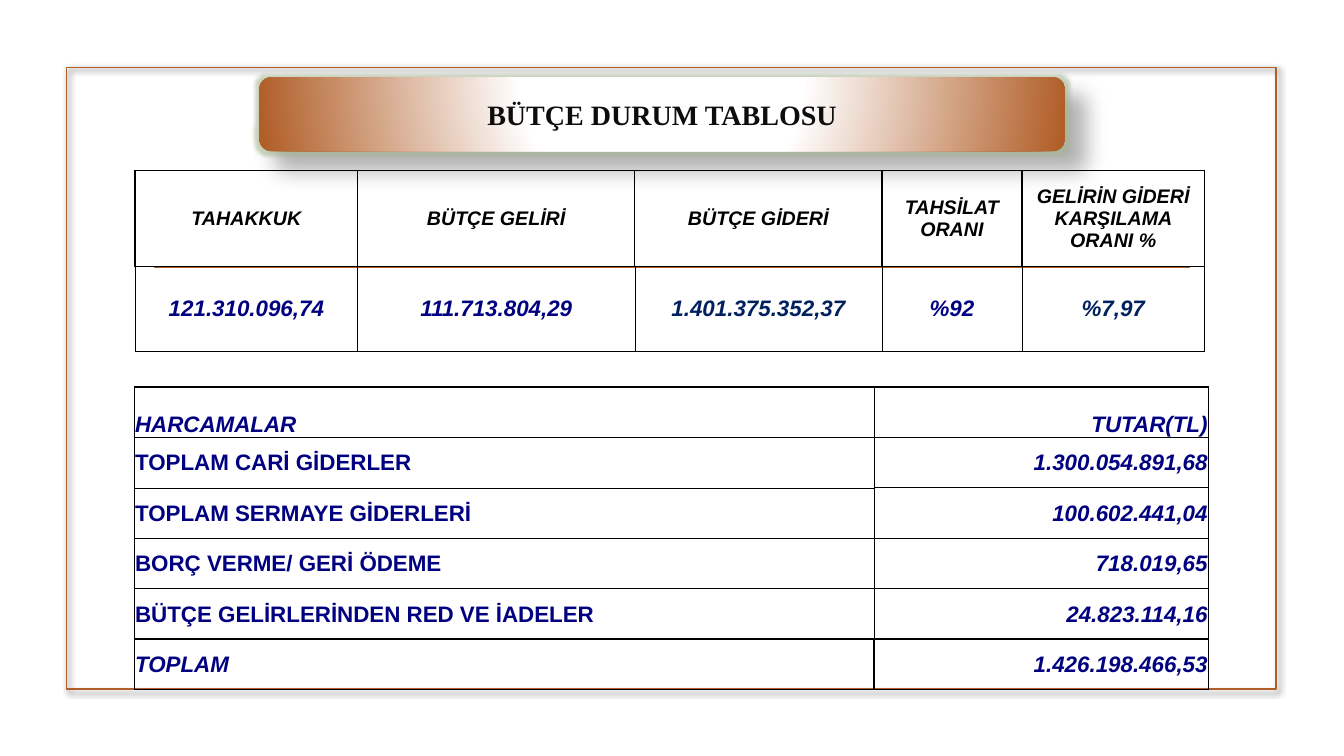
from lxml.etree import fromstring
from pptx import Presentation
from pptx.dml.color import RGBColor
from pptx.enum.shapes import MSO_CONNECTOR as CONN, MSO_SHAPE as SHAPE
from pptx.enum.text import MSO_ANCHOR as ANCHOR, PP_ALIGN as ALIGN
from pptx.oxml.ns import qn
from pptx.util import Pt

TITLE = "BÜTÇE DURUM TABLOSU"
# heading, value, colour of the value
REVENUE = [
    ("TAHAKKUK", "121.310.096,74", "navy"),
    ("BÜTÇE GELİRİ", "111.713.804,29", "navy"),
    ("BÜTÇE GİDERİ", "1.401.375.352,37", "dark_blue"),
    ("TAHSİLAT ORANI", "%92", "navy"),
    ("GELİRİN GİDERİ KARŞILAMA ORANI %", "%7,97", "dark_blue"),
]
# label, amount, is the label italic
EXPENSES = [
    ("HARCAMALAR", "TUTAR(TL)", True),
    ("TOPLAM CARİ GİDERLER", "1.300.054.891,68", False),
    ("TOPLAM SERMAYE GİDERLERİ", "100.602.441,04", False),
    ("BORÇ VERME/ GERİ ÖDEME", "718.019,65", False),
    ("BÜTÇE GELİRLERİNDEN RED VE İADELER", "24.823.114,16", False),
    ("TOPLAM", "1.426.198.466,53", True),
]

THEME = {
    "colors": {"copper": "B15E28", "white": "FFFFFF", "black": "000000",
               "navy": "000080", "dark_blue": "002060", "ink": "0D0D0D",
               "glow": "A5B592"},
    "sizes": {"title": 20, "heading": 14, "value": 16},
    "fonts": {"title": "Times New Roman", "table": "Arial"},
    "frame_line": 1.25, "thin": 0.5, "thick": 1,
}
HEX = THEME["colors"]
SIZE = THEME["sizes"]
THIN, THICK = THEME["thin"], THEME["thick"]
NS = 'xmlns:a="http://schemas.openxmlformats.org/drawingml/2006/main"'


def color(name):
    return RGBColor.from_string(HEX[name])


def emu(points):
    return int(Pt(points))


def write(tf, text, font, size, ink, align, italic=False):
    p = tf.paragraphs[0]
    p.alignment = align
    r = p.add_run()
    r.text = text
    r.font.color.rgb = color(ink)
    fmt = {"name": THEME["fonts"][font], "size": Pt(SIZE[size]),
           "bold": True, "italic": italic}
    for key, value in fmt.items():
        setattr(r.font, key, value)


def shadow_xml(alpha, blur, dist):
    return (f'<a:outerShdw blurRad="{emu(blur)}" dist="{emu(dist)}" dir="2700000" '
            f'algn="tl" rotWithShape="0"><a:srgbClr val="{HEX["black"]}">'
            f'<a:alpha val="{alpha * 1000}"/></a:srgbClr></a:outerShdw>')


def set_effects(s, effects=""):
    """Replace the effects of a shape or connector; none by default."""
    sppr = s._element.spPr
    for old in sppr.findall(qn("a:effectLst")):
        sppr.remove(old)
    sppr.append(fromstring(f"<a:effectLst {NS}>{effects}</a:effectLst>"))


def set_borders(cell, widths):
    """Widths go left, right, top, bottom."""
    tcpr = cell._tc.get_or_add_tcPr()
    for side, width in zip("LRTB", widths):
        tcpr.append(fromstring(
            f'<a:ln{side} {NS} w="{emu(width)}"><a:solidFill>'
            f'<a:srgbClr val="{HEX["black"]}"/></a:solidFill></a:ln{side}>'))


def add_grid(slide, left, top, cols, rows, vertical, horizontal, fill_cell):
    """Draw a table; vertical(row, edge) and horizontal(col, edge) give line widths."""
    table = slide.shapes.add_table(len(rows), len(cols), Pt(left), Pt(top),
                                   Pt(sum(cols)), Pt(sum(rows))).table
    table.first_row = table.horz_banding = False
    for column, width in zip(table.columns, cols):
        column.width = Pt(width)
    for i, height in enumerate(rows):
        table.rows[i].height = Pt(height)
        for j in range(len(cols)):
            cell = table.cell(i, j)
            fmt = {"margin_left": Pt(0.72), "margin_right": Pt(0.72),
                   "margin_top": Pt(0.72), "margin_bottom": 0,
                   "vertical_anchor": ANCHOR.MIDDLE}
            for key, value in fmt.items():
                setattr(cell, key, value)
            set_borders(cell, (vertical(i, j), vertical(i, j + 1),
                               horizontal(j, i), horizontal(j, i + 1)))
            cell.fill.background()
            fill_cell(cell, i, j)


def add_frame(slide):
    s = slide.shapes.add_shape(SHAPE.RECTANGLE, Pt(47.5), Pt(48.2), Pt(864), Pt(444.2))
    s.fill.background()
    s.line.color.rgb = color("copper")
    s.line.width = Pt(THEME["frame_line"])
    set_effects(s, shadow_xml(60, 4, 3))
    rule = slide.shapes.add_connector(CONN.STRAIGHT, Pt(110.2), Pt(190.8),
                                      Pt(850.3), Pt(190.8))
    rule.line.color.rgb = color("copper")
    rule.line.width = Pt(THEME["frame_line"])
    set_effects(rule)


def add_expenses(slide):
    last = len(EXPENSES) - 1

    def vertical(row, edge):
        return THIN if edge == 1 and row < last else THICK

    def horizontal(col, edge):
        return THIN if col == 0 and 2 <= edge < last else THICK

    def fill_cell(cell, row, col):
        label, amount, italic = EXPENSES[row]
        if row == 0:
            cell.vertical_anchor = ANCHOR.BOTTOM
        write(cell.text_frame, (label, amount)[col], "table", "value", "navy",
              (ALIGN.LEFT, ALIGN.RIGHT)[col], italic or col == 1)

    add_grid(slide, 95.8, 276.5, [528.5, 239], [36] * len(EXPENSES),
             vertical, horizontal, fill_cell)


def add_revenue(slide):
    def vertical(row, edge):
        return THIN if row == 1 and edge < len(REVENUE) else THICK

    def horizontal(col, edge):
        return THIN if edge == 2 else THICK

    def fill_cell(cell, row, col):
        heading, value, ink = REVENUE[col]
        text, size, ink = ((heading, "heading", "black"), (value, "value", ink))[row]
        write(cell.text_frame, text, "table", size, ink, ALIGN.CENTER, True)

    add_grid(slide, 96.5, 121.7, [159, 198, 176.5, 100, 130.5], [68.5, 60.5],
             vertical, horizontal, fill_cell)


def add_banner(slide):
    s = slide.shapes.add_shape(SHAPE.ROUNDED_RECTANGLE, Pt(185), Pt(55.2), Pt(576), Pt(52.8))
    s.line.fill.background()
    stops = "".join(f'<a:gs pos="{pos * 1000}"><a:srgbClr val="{HEX[name]}"/></a:gs>'
                    for pos, name in ((0, "white"), (35, "white"), (100, "copper")))
    s._element.spPr.find(qn("a:prstGeom")).addnext(fromstring(
        f'<a:gradFill {NS} rotWithShape="1"><a:gsLst>{stops}</a:gsLst><a:path path="circle">'
        '<a:fillToRect l="50000" t="-80000" r="50000" b="180000"/></a:path></a:gradFill>'))
    glow = (f'<a:glow rad="{emu(5)}"><a:srgbClr val="{HEX["glow"]}">'
            '<a:alpha val="60000"/></a:srgbClr></a:glow>')
    set_effects(s, glow + shadow_xml(30, 15, 18))
    s.text_frame.word_wrap = True
    s.text_frame.vertical_anchor = ANCHOR.MIDDLE
    write(s.text_frame, TITLE, "title", "title", "ink", ALIGN.CENTER)


def main():
    prs = Presentation()
    prs.slide_width, prs.slide_height = Pt(960), Pt(540)
    slide = prs.slides.add_slide(prs.slide_layouts[6])
    for add_part in (add_frame, add_expenses, add_revenue, add_banner):
        add_part(slide)
    prs.save("out.pptx")


if __name__ == "__main__":
    main()
